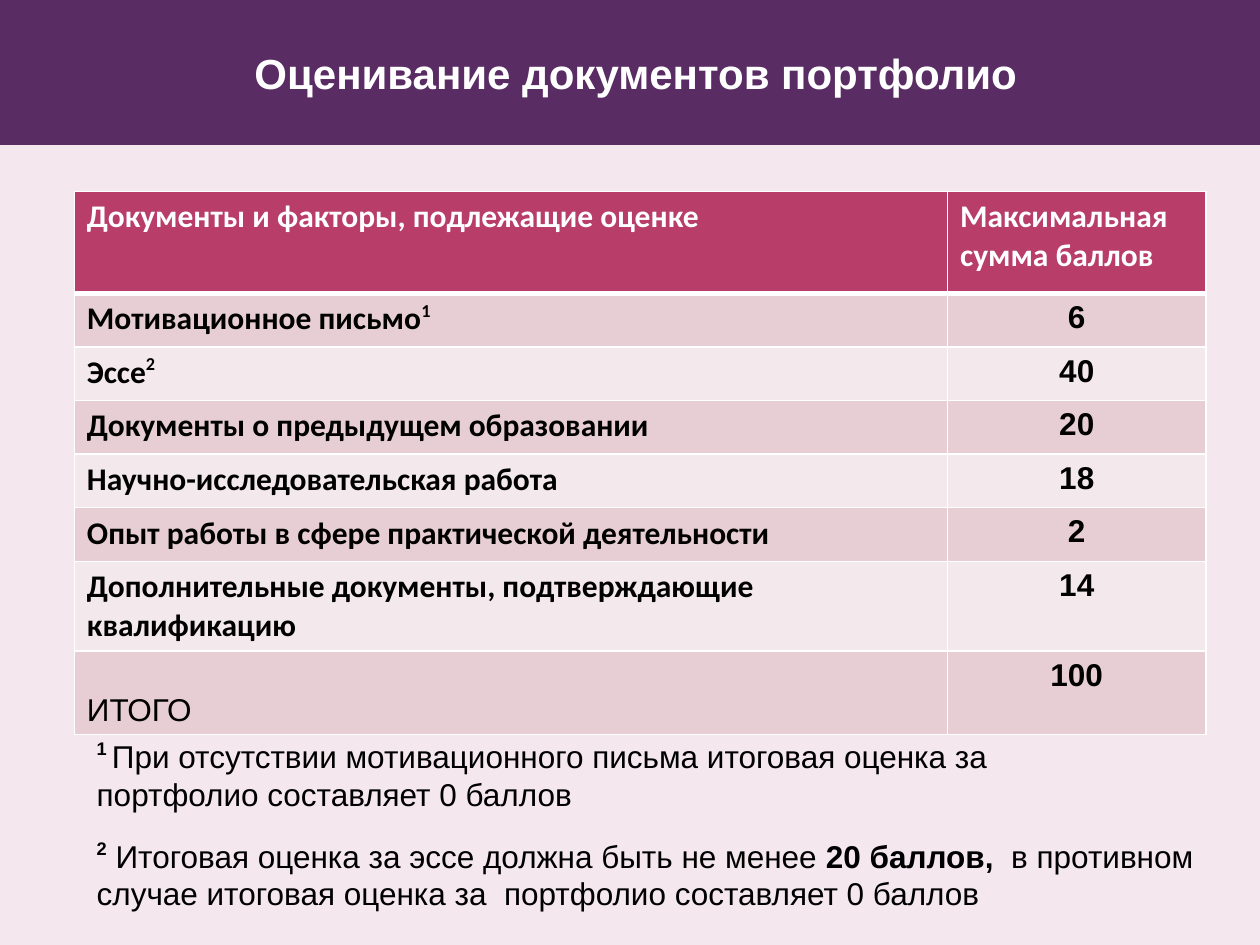
from lxml.etree import SubElement
from pptx import Presentation
from pptx.dml.color import RGBColor
from pptx.enum.text import MSO_ANCHOR, PP_ALIGN
from pptx.oxml.ns import qn
from pptx.util import Pt

BACK = RGBColor(0xF4, 0xE7, 0xED)
PURPLE = RGBColor(0x5A, 0x2C, 0x64)
CRIMSON = RGBColor(0xB8, 0x3D, 0x68)
BANDS = RGBColor(0xE6, 0xCE, 0xD4), RGBColor(0xF3, 0xE8, 0xEB)
WHITE = RGBColor(0xFF, 0xFF, 0xFF)
BLACK = RGBColor(0, 0, 0)

HEADERS = "Документы и факторы, подлежащие оценке", "Максимальная сумма баллов"
SCORES = [
    ("Мотивационное письмо", "1", "6"),
    ("Эссе", "2", "40"),
    ("Документы о предыдущем образовании", "", "20"),
    ("Научно-исследовательская работа", "", "18"),
    ("Опыт работы в сфере практической деятельности", "", "2"),
    ("Дополнительные документы, подтверждающие квалификацию", "", "14"),
]
TOTAL = "ИТОГО", "100"
COLUMNS = 499, 147.6
ROWS = [58.4] + [30.6] * 5 + [51.4, 47.5]


def add_text(p, text, size=18, font="Arial", color=BLACK, bold=False, raised=False):
    """Append a formatted run to a paragraph."""
    r = p.add_run()
    r.text = text
    r.font.size, r.font.name, r.font.bold = Pt(size), font, bold
    r.font.color.rgb = color
    if raised:
        r._r.get_or_add_rPr().set("baseline", "40000")


def add_title(s, text):
    """Turn the title placeholder into the banner across the top."""
    sp = s.shapes.title
    sp.left, sp.top, sp.width, sp.height = Pt(0), Pt(0), Pt(720), Pt(82.8)
    sp.fill.solid()
    sp.fill.fore_color.rgb = PURPLE
    tf = sp.text_frame
    tf.vertical_anchor = MSO_ANCHOR.MIDDLE
    p = tf.paragraphs[0]
    p.alignment = PP_ALIGN.CENTER
    add_text(p, text, size=24, color=WHITE, bold=True)


def style_cell(cell, fill, header=False, first=False):
    """Give a cell white borders and a solid fill."""
    widths = {"a:lnL": 1, "a:lnR": 1, "a:lnT": 3 if first else 1, "a:lnB": 3 if header else 1}
    for tag, width in widths.items():
        ln = SubElement(cell._tc.get_or_add_tcPr(), qn(tag), w=str(Pt(width)))
        SubElement(SubElement(ln, qn("a:solidFill")), qn("a:srgbClr"), val=str(WHITE))
    cell.fill.solid()
    cell.fill.fore_color.rgb = fill


def add_score_table(s):
    """Add the table of documents and their maximum scores."""
    table = s.shapes.add_table(len(ROWS), 2, Pt(42.5), Pt(109.4), Pt(sum(COLUMNS)), Pt(sum(ROWS))).table
    for column, width in zip(table.columns, COLUMNS):
        column.width = Pt(width)
    for i, height in enumerate(ROWS):
        table.rows[i].height = Pt(height)
        for cell in table.rows[i].cells:
            style_cell(cell, BANDS[(i - 1) % 2] if i else CRIMSON, i == 0, i == 1)
    for cell, text in zip(table.rows[0].cells, HEADERS):
        add_text(cell.text_frame.paragraphs[0], text, font="Calibri", color=WHITE, bold=True)
    for i, (name, note, score) in enumerate(SCORES, 1):
        p = table.cell(i, 0).text_frame.paragraphs[0]
        add_text(p, name, font="Calibri", bold=True)
        if note:
            add_text(p, note, font="Calibri", bold=True, raised=True)
        add_score(table.cell(i, 1), score)
    name, score = TOTAL
    cell = table.cell(len(ROWS) - 1, 0)
    cell.vertical_anchor = MSO_ANCHOR.BOTTOM
    add_text(cell.text_frame.paragraphs[0], name)
    add_score(table.cell(len(ROWS) - 1, 1), score)


def add_score(cell, text):
    """Write a centred bold score in a cell."""
    p = cell.text_frame.paragraphs[0]
    p.alignment = PP_ALIGN.CENTER
    add_text(p, text, bold=True)


def add_footnote(s, top, width, mark, *parts):
    """Add a footnote from its mark and (text, bold) parts."""
    tf = s.shapes.add_textbox(Pt(48.2), Pt(top), Pt(width), Pt(51)).text_frame
    tf.word_wrap = True
    p = tf.paragraphs[0]
    add_text(p, mark, bold=True, raised=True)
    for text, bold in parts:
        add_text(p, text, bold=bold)


def main():
    """Build and save the slide."""
    prs = Presentation()
    prs.slide_width, prs.slide_height = Pt(720), Pt(540)
    s = prs.slides.add_slide(prs.slide_layouts[5])
    s.background.fill.solid()
    s.background.fill.fore_color.rgb = BACK
    add_title(s, " Оценивание документов портфолио")
    add_score_table(s)
    add_footnote(s, 417.6, 601.2, "1 ",
                 ("При отсутствии мотивационного письма итоговая оценка за портфолио составляет 0 баллов", False))
    add_footnote(s, 474.5, 646.6, "2",
                 (" Итоговая оценка за эссе должна быть не менее ", False),
                 ("20 баллов,  ", True),
                 ("в противном случае итоговая оценка за  портфолио составляет 0 баллов", False))
    prs.save("out.pptx")


if __name__ == "__main__":
    main()
